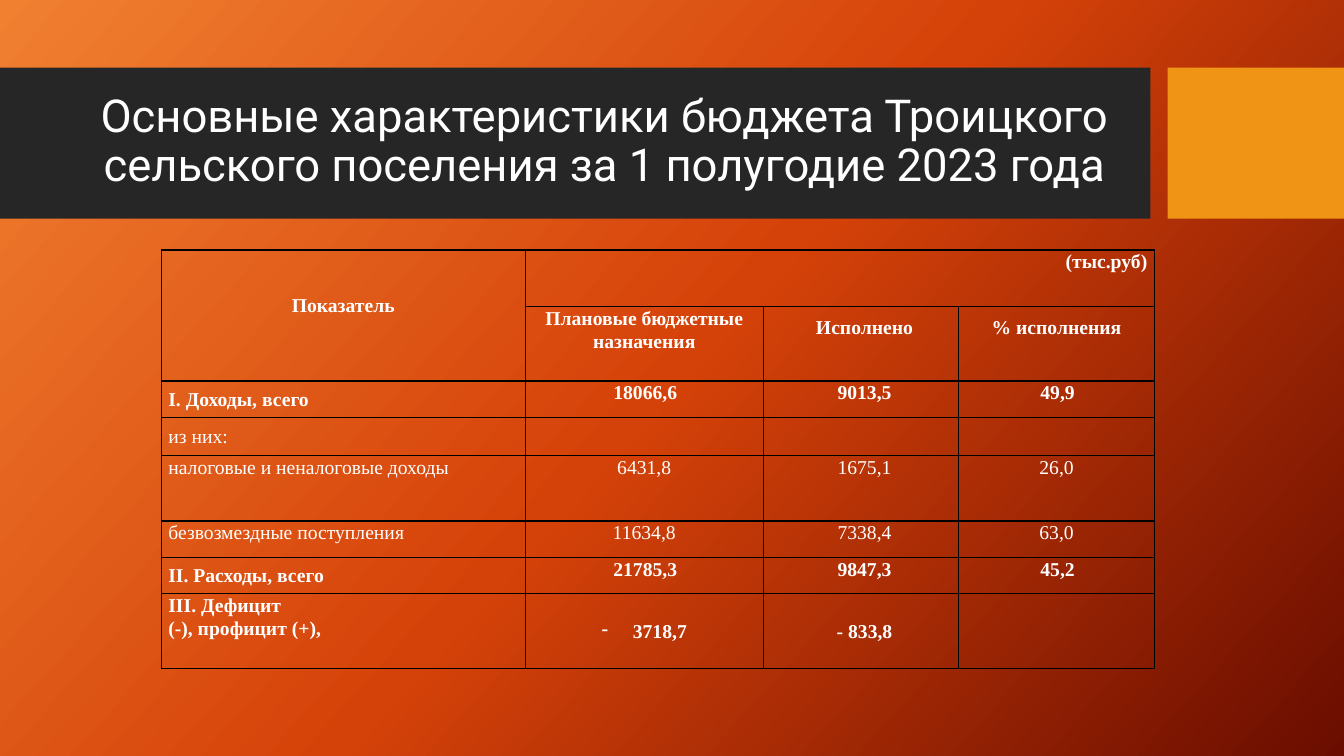
from copy import deepcopy
from dataclasses import dataclass

from lxml.etree import SubElement
from pptx import Presentation
from pptx.dml.color import RGBColor
from pptx.enum.shapes import MSO_SHAPE as Preset
from pptx.enum.text import MSO_ANCHOR as Anchor, PP_ALIGN as Align
from pptx.oxml.ns import qn
from pptx.util import Inches, Pt


@dataclass(frozen=True)
class Theme:
    white: str = "FFFFFF"
    band: str = "262626"
    accent: str = "F09415"
    border: str = "000000"
    gradient: tuple = ((0, "F18031"), (0.5, "D54209"), (1, "6A0D00"))
    gradient_angle: int = 318
    title_font: str = "Roboto"
    title_size: float = 32.4
    table_font: str = "Times New Roman"
    table_size: int = 14
    border_width: int = 1


class SlideBuilder:
    def __init__(self, slide, theme):
        self.slide = slide
        self.theme = theme

    def background(self):
        fill = self.slide.background.fill
        fill.gradient()
        fill.gradient_angle = self.theme.gradient_angle
        stop_list = next(self.slide.element.iter(qn("a:gsLst")))
        stop_list.append(deepcopy(stop_list[0]))
        for stop, (position, color) in zip(fill.gradient_stops, self.theme.gradient):
            stop.position = position
            stop.color.rgb = RGBColor.from_string(color)

    def rectangle(self, box, color):
        shape = self.slide.shapes.add_shape(Preset.RECTANGLE, *map(Inches, box))
        shape.shadow.inherit = False
        shape.fill.solid()
        shape.fill.fore_color.rgb = RGBColor.from_string(color)
        shape.line.fill.background()

    def text_run(self, paragraph, text, font, size, bold=False):
        run = paragraph.add_run()
        run.text = text
        for name, value in {"name": font, "size": Pt(size), "bold": bold}.items():
            setattr(run.font, name, value)
        run.font.color.rgb = RGBColor.from_string(self.theme.white)

    def title(self, box, text):
        frame = self.slide.shapes.add_textbox(*map(Inches, box)).text_frame
        frame.word_wrap = True
        frame.vertical_anchor = Anchor.MIDDLE
        paragraph = frame.paragraphs[0]
        paragraph.alignment = Align.CENTER
        paragraph.line_spacing = 0.9
        self.text_run(paragraph, text, self.theme.title_font, self.theme.title_size)

    def table(self, left, top, widths, heights):
        box = map(Inches, (left, top, sum(widths), sum(heights)))
        table = self.slide.shapes.add_table(len(heights), len(widths), *box).table
        table.first_row = table.horz_banding = False
        for column, width in zip(table.columns, widths):
            column.width = Inches(width)
        for row, height in zip(table.rows, heights):
            row.height = Inches(height)
        return table

    def borders(self, cell, open_side=None):
        """Draw the four cell borders, leaving open_side (such as "T") without a line."""
        properties = cell._tc.get_or_add_tcPr()
        for side in "LRTB":
            line = SubElement(properties, qn(f"a:ln{side}"), w=str(Pt(self.theme.border_width)))
            if side == open_side:
                SubElement(line, qn("a:noFill"))
            else:
                fill = SubElement(line, qn("a:solidFill"))
                SubElement(fill, qn("a:srgbClr"), val=self.theme.border)

    def cell(self, cell, text="", bold=True, align=Align.CENTER, anchor=Anchor.TOP,
             spacing=1.07, indent=0, margin=0, top=0, bullet=None, open_side=None):
        theme = self.theme
        self.borders(cell, open_side)
        cell.fill.background()
        layout = {"margin_left": Inches(0.07), "margin_right": Inches(0.07),
                  "margin_top": Inches(top), "margin_bottom": 0, "vertical_anchor": anchor}
        for name, value in layout.items():
            setattr(cell, name, value)
        frame = cell.text_frame
        for index, line in enumerate(text.split("\n")):
            paragraph = frame.add_paragraph() if index else frame.paragraphs[0]
            properties = paragraph._p.get_or_add_pPr()
            properties.set("marL", str(Inches(margin)))
            properties.set("indent", str(Inches(indent)))
            if bullet:
                SubElement(properties, qn("a:buChar"), char=bullet)
            paragraph.alignment = align
            paragraph.line_spacing = spacing
            if line:
                self.text_run(paragraph, line, theme.table_font, theme.table_size, bold)
            else:
                SubElement(paragraph._p, qn("a:endParaRPr"), sz=str(theme.table_size * 100))


LABEL = {"align": Align.LEFT}
MIDDLE_LABEL = {"align": Align.LEFT, "anchor": Anchor.MIDDLE}
PLAIN = {"bold": False}
EMPTY = ("", {})
UPPER = {"open_side": "B"}
LOWER = ("", {"open_side": "T"})


def value_cells(values, style, side_indent):
    """Pair figures with their format; the middle column has its own indent."""
    return [(value, {**style, "indent": indent})
            for value, indent in zip(values, (side_indent, 0.07, side_indent))]


BUDGET_ROWS = [
    [("Показатель", {"spacing": 1.5, "indent": -0.07, "top": 0.34}),
     ("(тыс.руб)", {"align": Align.RIGHT}), EMPTY, EMPTY],
    [EMPTY, ("Плановые бюджетные назначения", {}),
     ("Исполнено", {"spacing": 1.5, "indent": 0.07}), ("% исполнения", {"spacing": 1.5})],
    [("I. Доходы, всего", MIDDLE_LABEL),
     *value_cells(("18066,6", "9013,5", "49,9"), {}, 0.02)],
    [("из них:", {**MIDDLE_LABEL, **PLAIN}), EMPTY, EMPTY, EMPTY],
    [("налоговые и неналоговые доходы", {**LABEL, **PLAIN}),
     *value_cells(("6431,8", "1675,1", "26,0"), {**PLAIN, **UPPER}, -0.07)],
    [EMPTY, LOWER, LOWER, LOWER],
    [("безвозмездные поступления", {**LABEL, **PLAIN}),
     *value_cells(("11634,8", "7338,4", "63,0"), PLAIN, -0.07)],
    [("II. Расходы, всего", MIDDLE_LABEL),
     *value_cells(("21785,3", "9847,3", "45,2"), {}, 0.02)],
    [("III. Дефицит\n(-), профицит (+),", LABEL),
     ("3718,7", {"anchor": Anchor.MIDDLE, "margin": 0.31, "indent": -0.31, "bullet": "-"}),
     ("- 833,8", {"anchor": Anchor.MIDDLE, "indent": 0.07}), EMPTY],
]


def main():
    presentation = Presentation()
    presentation.slide_width = Inches(13.33)
    presentation.slide_height = Inches(7.5)
    theme = Theme()
    slide = presentation.slides.add_slide(presentation.slide_layouts[6])
    builder = SlideBuilder(slide, theme)

    builder.background()
    builder.rectangle((0, 0.67, 11.41, 1.5), theme.band)
    builder.rectangle((11.58, 0.67, 1.75, 1.5), theme.accent)
    builder.title((0.74, 0.82, 10.51, 1.18),
                  "Основные характеристики бюджета Троицкого "
                  "сельского поселения за 1 полугодие 2023 года")

    table = builder.table(1.6, 2.48, (3.61, 2.36, 1.94, 1.94),
                          (0.56, 0.74, 0.36, 0.38, 0.36, 0.29, 0.36, 0.36, 0.74))
    for row, entries in enumerate(BUDGET_ROWS):
        for column, (text, style) in enumerate(entries):
            builder.cell(table.cell(row, column), text, **style)
    for first, last in (((0, 0), (1, 0)), ((0, 1), (0, 3)), ((4, 0), (5, 0))):
        table.cell(*first).merge(table.cell(*last))

    presentation.save("out.pptx")


if __name__ == "__main__":
    main()
